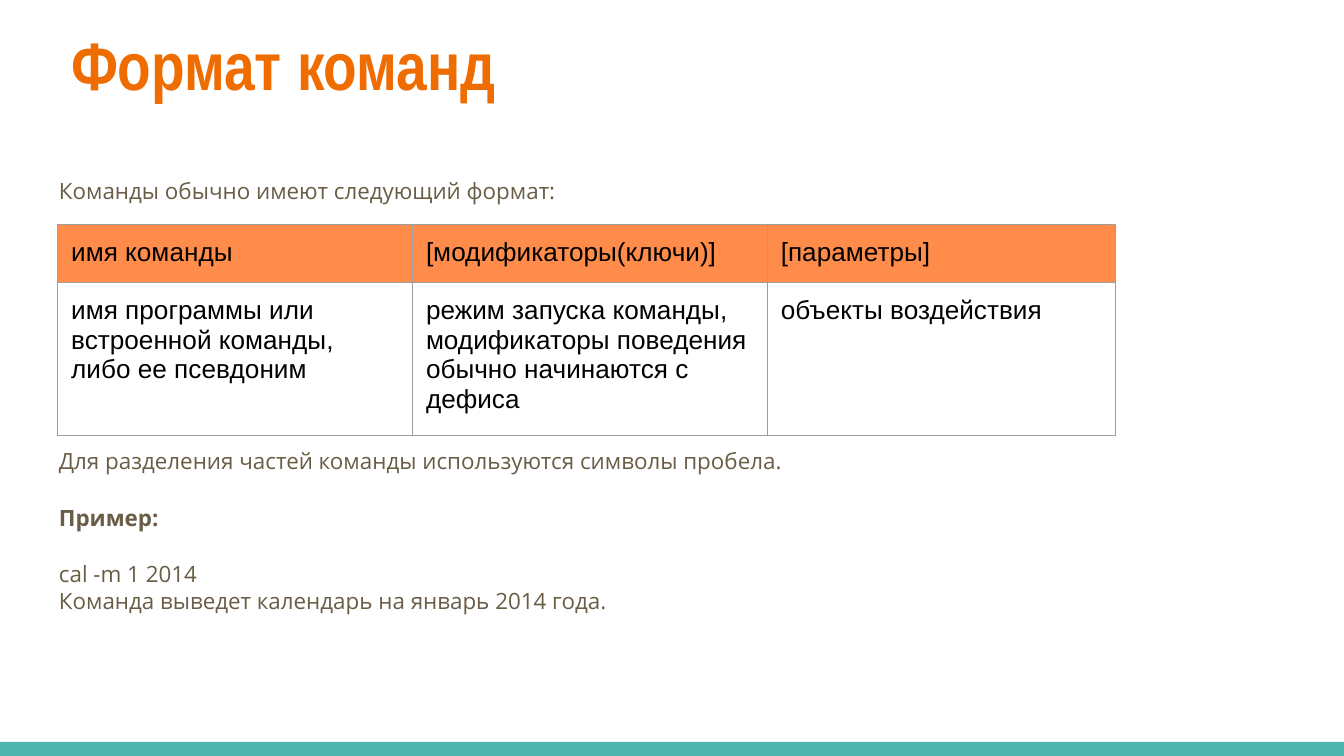
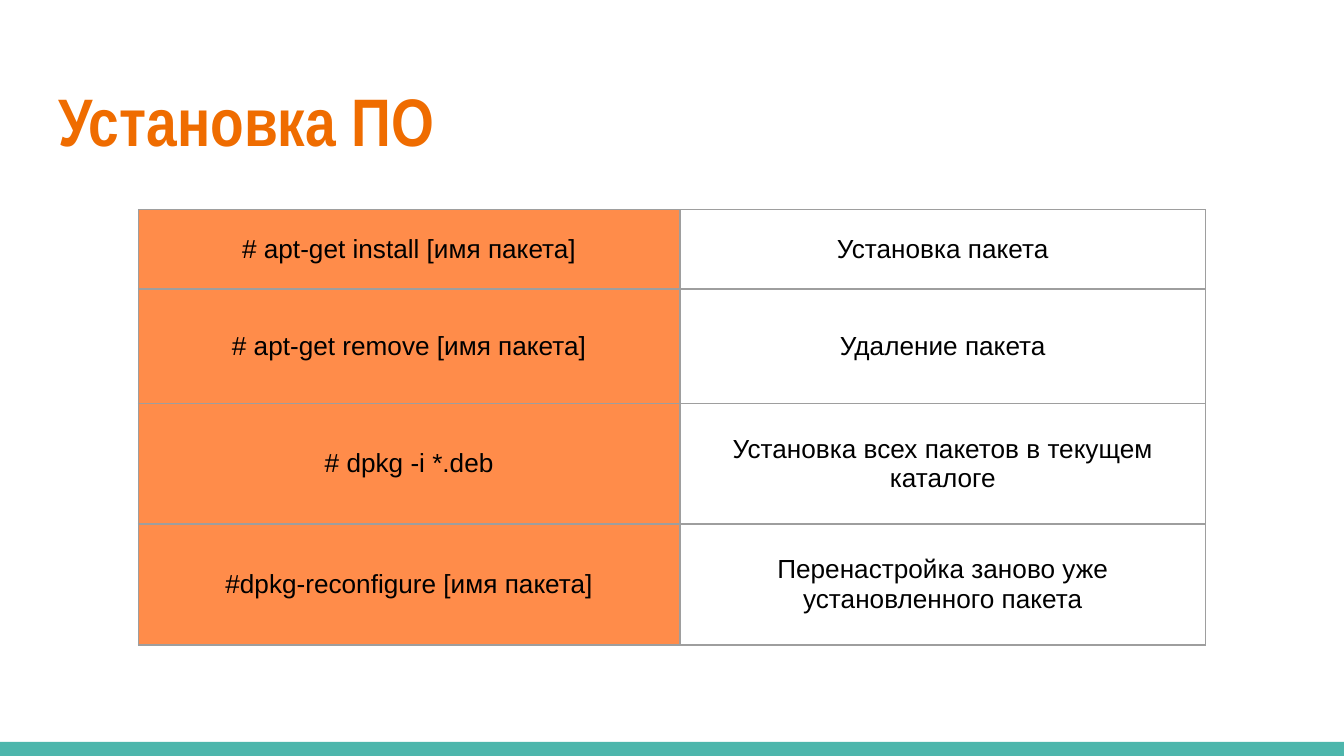
"""Build two slides on shell commands: the command format and package setup."""
from lxml.etree import fromstring
from pptx import Presentation
from pptx.dml.color import RGBColor
from pptx.enum.shapes import MSO_SHAPE as Shape
from pptx.enum.text import MSO_ANCHOR as Anchor, PP_ALIGN as Align
from pptx.oxml.ns import nsdecls
from pptx.util import Inches, Pt

hue = RGBColor.from_string
TEAL, ORANGE, PEACH = "4DB6AC", "EF6C00", "FF8C4A"
BROWN, BLACK, GRAY = "695D46", "000000", "9E9E9E"

deck = Presentation()
deck.slide_width = Inches(10)
deck.slide_height = deck.slide_width * 9 // 16
unit = deck.slide_width / 100
pad = int(unit)


def place(*spans):
    """Turn grid units, 100 to the slide width, into lengths."""
    return [round(n * unit) for n in spans]


def style(par, text, font, size, color, bold=False):
    """Fill one paragraph and set its font."""
    par.text = text
    par.font.name, par.font.size, par.font.bold = font, Pt(size), bold
    par.font.color.rgb = hue(color)


pages = [
    {
        "title": "Формат команд", "spot": (4.3, 0.7),
        "body": [
            ("Команды обычно имеют следующий формат:", 1.15, 0, False),
            ("Для разделения частей команды используются символы пробела.",
             1.0, 130, False),
            ("Пример:", 1.0, 16, True),
            ("cal -m 1 2014", 1.0, 16, False),
            ("Команда выведет календарь на январь 2014 года.", 1.0, 0, False),
        ],
        "corner": (4.3, 16.7), "cols": (26.4, 26.4, 25.9), "rows": (4.2, 4.2),
        "cells": [
            ("имя команды", "[модификаторы(ключи)]", "[параметры]"),
            ("имя программы или встроенной команды, либо ее псевдоним",
             "режим запуска команды, модификаторы поведения обычно начинаются с дефиса",
             "объекты воздействия"),
        ],
        "head": "row", "align": Align.LEFT, "anchor": Anchor.TOP,
    },
    {
        "title": "Установка ПО", "spot": (3.4, 4.9), "body": [],
        "corner": (10.3, 15.6), "cols": (40.3, 39.1), "rows": (5.9, 8.5, 9, 9),
        "cells": [
            ("# apt-get install [имя пакета]", "Установка пакета"),
            ("# apt-get remove [имя пакета]", "Удаление пакета"),
            ("# dpkg -i *.deb", "Установка всех пакетов в текущем каталоге"),
            ("#dpkg-reconfigure [имя пакета]",
             "Перенастройка заново уже установленного пакета"),
        ],
        "head": "column", "align": Align.CENTER, "anchor": Anchor.MIDDLE,
    },
]

for page in pages:
    slide = deck.slides.add_slide(deck.slide_layouts[6])
    shapes = slide.shapes

    band = shapes.add_shape(Shape.RECTANGLE, *place(0, 55.2, 100, 1.05))
    band.shadow.inherit = False
    band.fill.solid()
    band.fill.fore_color.rgb = hue(TEAL)
    band.line.fill.background()

    blocks = [((*page["spot"], 93.2, 7.7), "Arial Narrow", 36, ORANGE,
               [(page["title"], 1.0, 0, True)])]
    if page["body"]:
        blocks.append(((3.4, 11.9, 93.2, 42.2), "Open Sans", 12, BROWN, page["body"]))
    for area, font, size, color, lines in blocks:
        frame = shapes.add_textbox(*place(*area)).text_frame
        frame.word_wrap = True
        frame.margin_left = frame.margin_right = pad
        frame.margin_top = frame.margin_bottom = pad
        for i, (text, pitch, gap, bold) in enumerate(lines):
            par = frame.add_paragraph() if i else frame.paragraphs[0]
            style(par, text, font, size, color, bold)
            par.line_spacing, par.space_before = pitch, Pt(gap)

    cols, rows = page["cols"], page["rows"]
    table = shapes.add_table(len(rows), len(cols),
                             *place(*page["corner"], sum(cols), sum(rows))).table
    table.first_row = table.horz_banding = False
    for col, width in zip(table.columns, place(*cols)):
        col.width = width
    for row, height in zip(table.rows, place(*rows)):
        row.height = height
    for r, texts in enumerate(page["cells"]):
        for c, text in enumerate(texts):
            cell = table.cell(r, c)
            cell.margin_left = cell.margin_right = pad
            cell.margin_top = cell.margin_bottom = pad
            cell.vertical_anchor = page["anchor"]
            par = cell.text_frame.paragraphs[0]
            style(par, text, "Arial", 14, BLACK)
            par.alignment = page["align"]
            if (r if page["head"] == "row" else c) == 0:
                cell.fill.solid()
                cell.fill.fore_color.rgb = hue(PEACH)
            else:
                cell.fill.background()
            props = cell._tc.get_or_add_tcPr()
            for i, side in enumerate("LRTB"):
                props.insert(i, fromstring(
                    f'<a:ln{side} {nsdecls("a")} w="{Pt(0.75)}"><a:solidFill>'
                    f'<a:srgbClr val="{GRAY}"/></a:solidFill></a:ln{side}>'))

deck.save("out.pptx")
